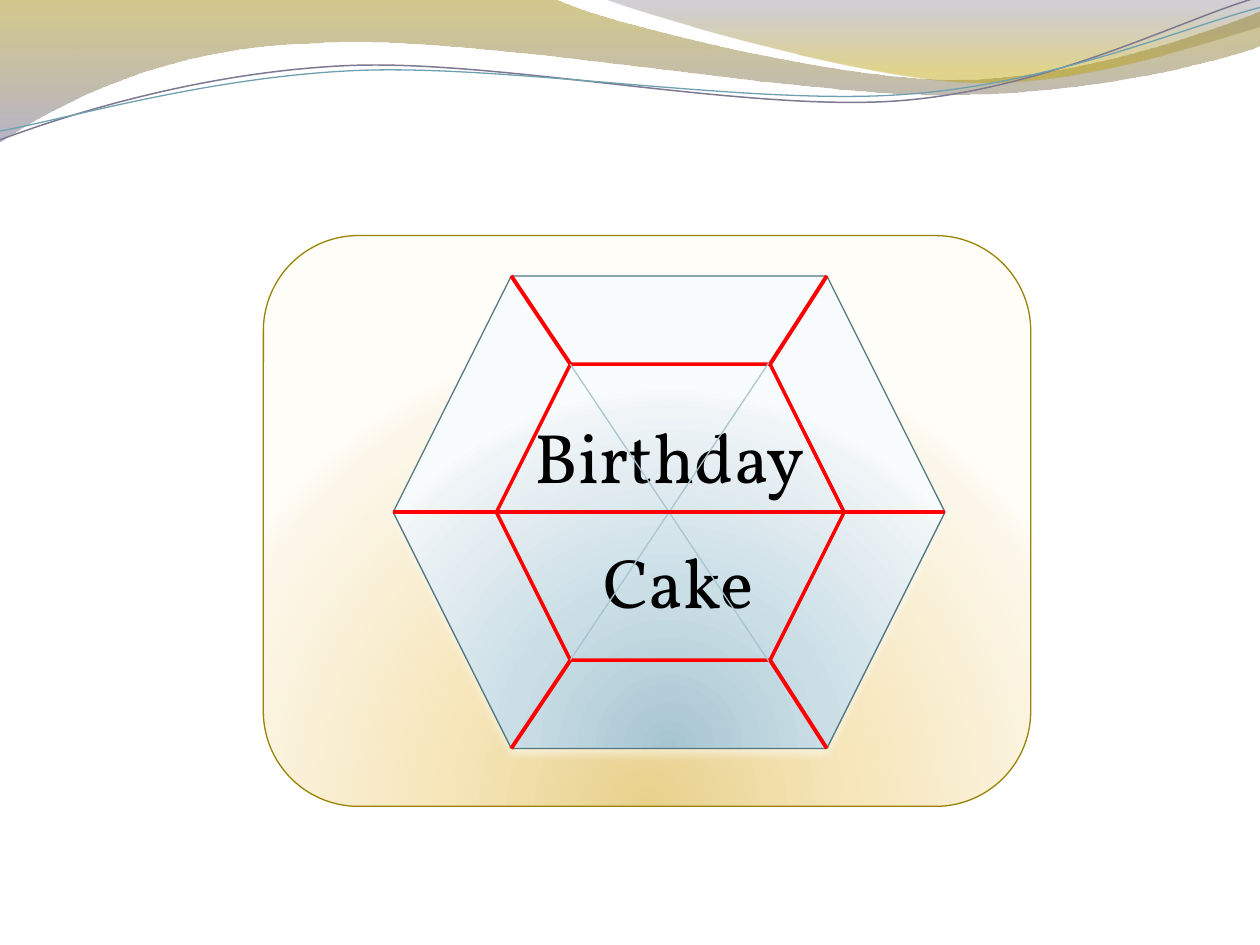
from dataclasses import dataclass
from math import cos, radians, sin
from typing import Optional

from lxml import etree
from pptx import Presentation
from pptx.dml.color import RGBColor
from pptx.enum.shapes import MSO_CONNECTOR as Connector, MSO_SHAPE as Shape
from pptx.enum.text import MSO_AUTO_SIZE as AutoSize, PP_ALIGN as Align
from pptx.oxml import parse_xml
from pptx.oxml.ns import nsdecls, qn
from pptx.util import Inches, Pt

BLACK = RGBColor(0x00, 0x00, 0x00)
WHITE = RGBColor(0xFF, 0xFF, 0xFF)
RED = RGBColor(0xFF, 0x00, 0x00)
PALE_BLUE = RGBColor(0xA8, 0xC6, 0xD0)
STEEL = RGBColor(0x51, 0x77, 0x83)
OLIVE = RGBColor(0x99, 0x83, 0x05)
GOLD = RGBColor(0x9E, 0x87, 0x00)
LILAC = RGBColor(0x7B, 0x76, 0x9C)
VIOLET = RGBColor(0x66, 0x62, 0x7C)
YELLOW = RGBColor(0xBD, 0xA1, 0x00)
VIOLET_LINE = RGBColor(0x7C, 0x79, 0x91)
TEAL_LINE = RGBColor(0x6E, 0xA0, 0xB0)
CREAM_STOPS = ((0, RGBColor(0xE7, 0xD1, 0x8D)), (43, RGBColor(0xF6, 0xE6, 0xBA)),
               (93, RGBColor(0xFC, 0xF7, 0xEA)), (100, RGBColor(0xFF, 0xFD, 0xF7)))
ICE_STOPS = ((0, RGBColor(0xA7, 0xC5, 0xD1)), (43, RGBColor(0xCA, 0xDE, 0xE6)),
             (93, RGBColor(0xEF, 0xF4, 0xF7)), (100, RGBColor(0xF9, 0xFC, 0xFD)))

LINEAR = '<a:lin ang="5400000" scaled="0"/>'
RADIAL = ('<a:path path="circle"><a:fillToRect l="50000" t="130000" '
          'r="50000" b="-30000"/></a:path>')


@dataclass
class Wave:
    """Segments: a pair ends a straight line, six numbers are a Bezier curve."""
    start: tuple
    segments: tuple
    stops: tuple = ()
    line: Optional[RGBColor] = None
    width: float = 0.75
    tilt: float = 0
    pivot: tuple = (0, 0)


@dataclass
class Box:
    left: float
    top: float
    width: float
    height: float

    def inches(self) -> tuple:
        return tuple(Inches(v) for v in (self.left, self.top, self.width, self.height))

    def hexagon_corners(self) -> list:
        """Corners clockwise from the left one, for the preset hexagon."""
        inset = self.height / 4
        right, bottom = self.left + self.width, self.top + self.height
        middle = self.top + self.height / 2
        return [(self.left, middle), (self.left + inset, self.top),
                (right - inset, self.top), (right, middle),
                (right - inset, bottom), (self.left + inset, bottom)]


WAVES = (
    Wave((0, 0), ((4.4, -0.01), (4.76, 0.17, 6.64, 0.63, 7.58, 0.63),
                  (8.53, 0.63, 9.58, 0.26, 10, 0.09), (10.01, 0.36),
                  (9.83, 0.44, 8.7, 0.76, 7.46, 0.75),
                  (6.22, 0.75, 3.82, 0.28, 2.57, 0.34),
                  (1.29, 0.36, 0.46, 0.83, -0.01, 1.13), (0, 0)),
         stops=((0, GOLD, 45), (100, LILAC, 55))),
    Wave((4.79, -0.01), ((5.09, 0.11, 6.82, 0.62, 7.69, 0.65),
                         (8.56, 0.69, 9.61, 0.32, 10, 0.21), (10, 0), (4.79, -0.01)),
         stops=((0, VIOLET, 30), (80, YELLOW, 45))),
    Wave((0, 1.11), ((0.48, 0.93, 1.58, 0.57, 2.77, 0.52),
                     (3.95, 0.47, 5.93, 0.89, 7.13, 0.8),
                     (8.33, 0.71, 9.38, 0.15, 9.98, -0.02)),
         line=VIOLET_LINE, width=0.85, tilt=-2.7, pivot=(4.99, 0.57)),
    Wave((0, 1.04), ((0.47, 0.96, 1.64, 0.61, 2.83, 0.56),
                     (4.03, 0.51, 5.97, 0.84, 7.17, 0.75),
                     (8.36, 0.67, 9.41, 0.21, 10, 0.06)),
         line=TEAL_LINE, tilt=-2.7, pivot=(5, 0.59)),
)
PLATE = Box(2.09, 1.87, 6.09, 4.53)
CAKE = Box(3.12, 2.19, 4.38, 3.75)
INNER_CAKE = Box(3.94, 2.89, 2.76, 2.35)
CAPTION = Box(3.91, 3.23, 2.81, 1.85)


def set_gradient(shape, stops: tuple, direction: str) -> None:
    """Fill with (position, colour[, opacity]) stops."""
    marks = ""
    for position, color, *opacity in stops:
        alpha = f'<a:alpha val="{opacity[0] * 1000}"/>' if opacity else ""
        marks += (f'<a:gs pos="{position * 1000}"><a:srgbClr val="{color}">'
                  f'{alpha}</a:srgbClr></a:gs>')
    shape.fill.background()
    blank_fill = shape._element.spPr.find(qn("a:noFill"))
    blank_fill.getparent().replace(blank_fill, parse_xml(
        f'<a:gradFill {nsdecls("a")} rotWithShape="1"><a:gsLst>{marks}</a:gsLst>'
        f'{direction}</a:gradFill>'))


def set_glow_shadow(shape) -> None:
    effects = shape._element.spPr.find(qn("a:effectLst"))
    effects.append(parse_xml(
        f'<a:outerShdw {nsdecls("a")} blurRad="{Pt(4.5)}" dist="{Pt(3)}" '
        f'dir="5400000" rotWithShape="0"><a:srgbClr val="{WHITE}">'
        '<a:alpha val="48000"/></a:srgbClr></a:outerShdw>'))


def turn(point: tuple, pivot: tuple, degrees: float) -> tuple:
    angle = radians(degrees)
    x, y = point[0] - pivot[0], point[1] - pivot[1]
    return (pivot[0] + x * cos(angle) - y * sin(angle),
            pivot[1] + x * sin(angle) + y * cos(angle))


def bend(shape, segments: tuple) -> None:
    """Gather the three points of each curve into one Bezier element."""
    steps = iter(list(shape._element.spPr.iter(qn("a:lnTo"))))
    for segment in segments:
        first = next(steps)
        if len(segment) == 6:
            curve = etree.Element(qn("a:cubicBezTo"))
            first.addprevious(curve)
            for step in (first, next(steps), next(steps)):
                curve.append(step[0])
                step.getparent().remove(step)


def draw_wave(slide, wave: Wave) -> None:
    points = [wave.start]
    for segment in wave.segments:
        points += zip(segment[::2], segment[1::2])
    level = [turn(point, wave.pivot, -wave.tilt) for point in points]
    (x, y), *rest = [(Inches(px), Inches(py)) for px, py in level]
    builder = slide.shapes.build_freeform(x, y)
    builder.add_line_segments(rest, close=bool(wave.stops))
    band = builder.convert_to_shape()
    bend(band, wave.segments)
    band.rotation = wave.tilt
    band.shadow.inherit = False
    if wave.stops:
        set_gradient(band, wave.stops, LINEAR)
        band.line.fill.background()
    else:
        band.fill.background()
        band.line.color.rgb = wave.line
        band.line.width = Pt(wave.width)


def draw_shape(slide, kind: Shape, box: Box, line: RGBColor, width: float,
               stops: tuple = ()) -> None:
    shape = slide.shapes.add_shape(kind, *box.inches())
    shape.shadow.inherit = False
    if stops:
        set_gradient(shape, stops, RADIAL)
        set_glow_shadow(shape)
    else:
        shape.fill.background()
    shape.line.color.rgb = line
    shape.line.width = Pt(width)


def draw_line(slide, start: tuple, end: tuple, color: RGBColor, width: float) -> None:
    cut = slide.shapes.add_connector(Connector.STRAIGHT,
                                     *(Inches(v) for v in (*start, *end)))
    cut.line.color.rgb = color
    cut.line.width = Pt(width)
    etree.SubElement(cut._element.spPr, qn("a:effectLst"))


def draw_text(slide, lines: tuple, box: Box, *, font: str, size: float,
              color: RGBColor, gap: float) -> None:
    frame = slide.shapes.add_textbox(*box.inches()).text_frame
    frame.word_wrap = True
    frame.auto_size = AutoSize.SHAPE_TO_FIT_TEXT
    for index, words in enumerate(lines):
        paragraph = frame.add_paragraph() if index else frame.paragraphs[0]
        paragraph.alignment = Align.CENTER
        paragraph._p.get_or_add_pPr().set("rtl", "1")
        if index:
            paragraph.space_before = Pt(gap)
        run = paragraph.add_run()
        run.text = words
        run.font.name, run.font.size = font, Pt(size)
        run.font.color.rgb = color


def main() -> None:
    deck = Presentation()
    deck.slide_width, deck.slide_height = Inches(10), Inches(7.5)
    slide = deck.slides.add_slide(deck.slide_layouts[6])

    # Waves along the top
    for wave in WAVES:
        draw_wave(slide, wave)
    # Plate, cake and caption
    draw_shape(slide, Shape.ROUNDED_RECTANGLE, PLATE, OLIVE, 0.75, CREAM_STOPS)
    draw_shape(slide, Shape.HEXAGON, CAKE, STEEL, 0.75, ICE_STOPS)
    draw_text(slide, ("Birthday", "Cake "), CAPTION, font="Vollkorn", size=40,
              color=BLACK, gap=23.5)
    draw_shape(slide, Shape.HEXAGON, INNER_CAKE, RED, 2)
    # Pale diagonals, then red cuts; the left cut runs across the inner cake
    outer, inner = CAKE.hexagon_corners(), INNER_CAKE.hexagon_corners()
    for corner, opposite in zip(outer[:3], outer[3:]):
        draw_line(slide, corner, opposite, PALE_BLUE, 0.75)
    for corner, target in zip(outer, [inner[3], *inner[1:]]):
        draw_line(slide, corner, target, RED, 2.25)
    deck.save("out.pptx")


if __name__ == "__main__":
    main()
